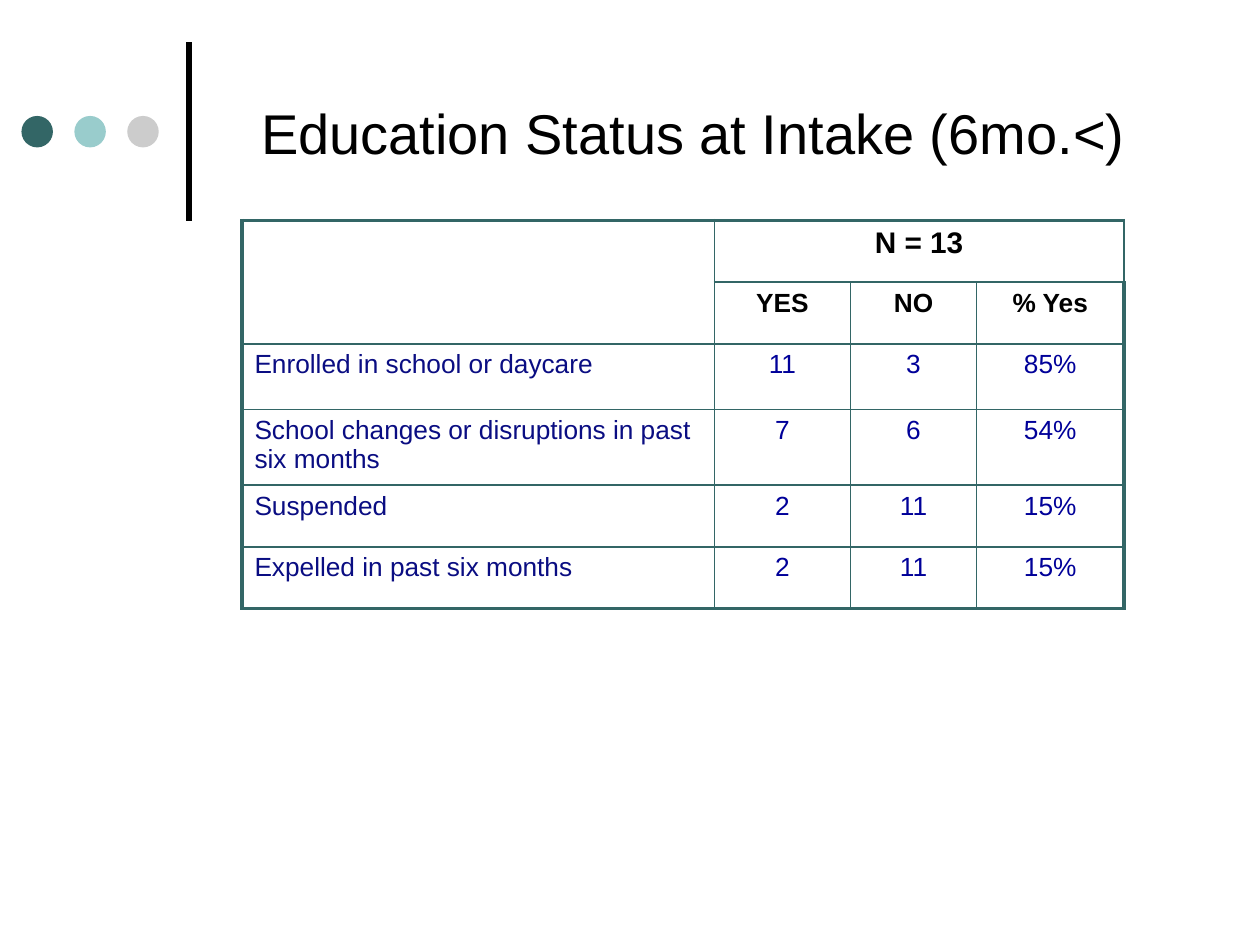
import pptx
import pptx.dml.color
import pptx.enum.shapes
import pptx.enum.text
import pptx.oxml
import pptx.oxml.ns
import pptx.util
from pptx.util import Inches

TEAL = "336666"
ALIGN = pptx.enum.text.PP_ALIGN
ANCHOR = pptx.enum.text.MSO_ANCHOR


def rgb(value):
    return pptx.dml.color.RGBColor.from_string(value)


def write(tf, text, size=15, color="000000", bold=False, align=ALIGN.CENTER, anchor=ANCHOR.TOP):
    """Fill a text frame with one formatted paragraph."""
    tf.word_wrap = True
    tf.vertical_anchor = anchor
    p = tf.paragraphs[0]
    p.alignment = align
    r = p.add_run()
    r.text = text
    r.font.name = "Arial"
    r.font.size = pptx.util.Pt(size)
    r.font.bold = bold
    r.font.color.rgb = rgb(color)


prs = pptx.Presentation()
prs.slide_width, prs.slide_height = Inches(10), Inches(7.5)
s = prs.slides.add_slide(prs.slide_layouts[6])

# Header: vertical rule, three dots and the title
rule = s.shapes.add_connector(
    pptx.enum.shapes.MSO_CONNECTOR.STRAIGHT,
    Inches(1.5), Inches(1.75), Inches(1.5), Inches(0.33))
rule.line.color.rgb = rgb("000000")
rule.line.width = pptx.util.Pt(3)
rule._element.spPr.append(pptx.oxml.parse_xml(
    f"<a:effectLst {pptx.oxml.ns.nsdecls('a')}/>"))

for i, color in enumerate([TEAL, "99CCCC", "CCCCCC"]):
    dot = s.shapes.add_shape(
        pptx.enum.shapes.MSO_SHAPE.OVAL,
        Inches(0.17 + 0.42 * i), Inches(0.92), Inches(0.25), Inches(0.25))
    dot.shadow.inherit = False
    dot.fill.solid()
    dot.fill.fore_color.rgb = rgb(color)
    dot.line.fill.background()

title = s.shapes.add_textbox(Inches(1.67), Inches(0.21), Inches(7.67), Inches(1.67))
write(title.text_frame, "Education Status at Intake (6mo.<)", size=32, anchor=ANCHOR.MIDDLE)

# Table
rows = [
    ["", "N = 13", "", ""],
    ["", "YES", "NO", "% Yes"],
    ["Enrolled in school or daycare", "11", "3", "85%"],
    ["School changes or disruptions in past six months", "7", "6", "54%"],
    ["Suspended", "2", "11", "15%"],
    ["Expelled in past six months", "2", "11", "15%"],
]
widths = [3.75, 1.08, 1, 1.17]
heights = [0.49, 0.49, 0.52, 0.56, 0.49, 0.49]
table = s.shapes.add_table(
    len(rows), len(widths), Inches(1.92), Inches(1.75),
    Inches(sum(widths)), Inches(sum(heights))).table
table.first_row = table.horz_banding = False
for column, width in zip(table.columns, widths):
    column.width = Inches(width)
for row, height in zip(table.rows, heights):
    row.height = Inches(height)
table.cell(0, 0).merge(table.cell(1, 0))
table.cell(0, 1).merge(table.cell(0, 3))

last_row, last_col = len(rows) - 1, len(widths) - 1
for i, row in enumerate(rows):
    for j, text in enumerate(row):
        cell = table.cell(i, j)
        cell.fill.background()
        if text:
            header = i < 2
            write(cell.text_frame, text,
                  size=17 if i == 0 else 15,
                  color="000000" if header else "0A0D82" if j == 0 else "000099",
                  bold=header,
                  align=ALIGN.LEFT if j == 0 else ALIGN.CENTER)
        # Heavy outer frame, thin inner grid
        outer = {"L": j == 0, "R": j == last_col, "T": i == 0, "B": i == last_row}
        for k, (side, heavy) in enumerate(outer.items()):
            width = pptx.util.Pt(2.25 if heavy else 1)
            cell._tc.get_or_add_tcPr().insert(k, pptx.oxml.parse_xml(
                f'<a:ln{side} {pptx.oxml.ns.nsdecls("a")} w="{width}"><a:solidFill>'
                f'<a:srgbClr val="{TEAL}"/></a:solidFill></a:ln{side}>'))

prs.save("out.pptx")
